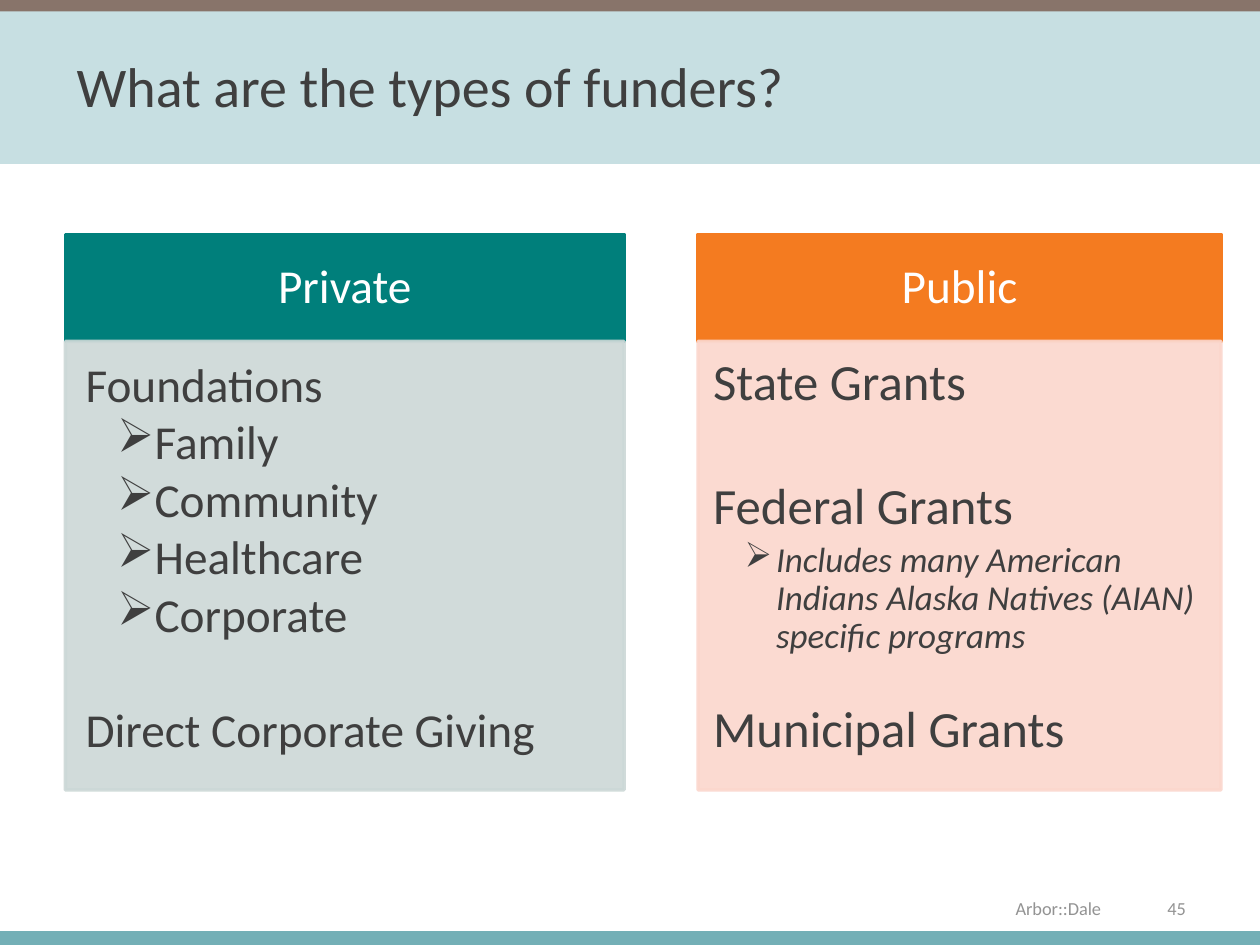
from dataclasses import dataclass

from lxml import etree
from pptx import Presentation
from pptx import util as u
from pptx.dml.color import RGBColor
from pptx.enum import shapes, text
from pptx.oxml import ns

Pt = u.Pt
FONT = "Calibri"
INK = RGBColor(0x3F, 0x3F, 0x3F)
GREY = RGBColor(0x93, 0x93, 0x93)
WHITE = RGBColor(0xFF, 0xFF, 0xFF)
BROWN = RGBColor(0x88, 0x74, 0x6A)
AQUA = RGBColor(0x73, 0xAF, 0xB6)
PALE_AQUA = RGBColor(0xC7, 0xDF, 0xE2)
TEAL = RGBColor(0x00, 0x7F, 0x7B)
PALE_TEAL = RGBColor(0xCC, 0xD8, 0xD7)
ORANGE = RGBColor(0xF4, 0x7B, 0x20)
PALE_ORANGE = RGBColor(0xFB, 0xD7, 0xCD)

WIDTH, HEIGHT = 720, 540
HEAD_TOP, HEAD_H, BODY_H = 133.9, 61.2, 256.3
HEAD_INSETS = (15.1, 8.6, 15.1, 8.6)
LINE_SPACING = 0.9


@dataclass
class Item:
    text: str
    size: float
    bullet: bool = False
    italic: bool = False
    before: float = 0


@dataclass
class Column:
    title: str
    left: float
    width: float
    color: RGBColor
    pale: RGBColor
    insets: tuple[float, float, float, float]
    items: list[Item]


COLUMNS = [
    Column("Private", 37.4, 319.3, TEAL, PALE_TEAL, (11.5, 11.5, 15.1, 17.3), [
        Item("Foundations", 27),
        *[Item(kind, 27, bullet=True)
          for kind in ("Family", "Community", "Healthcare", "Corporate")],
        Item("Direct Corporate Giving", 27, before=33.3),
    ]),
    Column("Public", 398.9, 298.8, ORANGE, PALE_ORANGE, (8.6, 8.6, 11.5, 12.2), [
        Item("State Grants", 29),
        Item("Federal Grants", 29, before=35.7),
        Item("Includes many American Indians Alaska Natives (AIAN) specific programs",
             20, bullet=True, italic=True),
        Item("Municipal Grants", 29, before=24.8),
    ]),
]


def add_rect(s, left: float, top: float, width: float, height: float, color: RGBColor):
    sp = s.shapes.add_shape(shapes.MSO_SHAPE.RECTANGLE,
                            Pt(left), Pt(top), Pt(width), Pt(height))
    sp.shadow.inherit = False
    sp.fill.solid()
    sp.fill.fore_color.rgb = color
    sp.line.fill.background()
    return sp


def add_outline(sp, color: RGBColor) -> None:
    sp.line.color.rgb = color
    sp.line.width = Pt(2)


def set_opacity(sp, percent: int) -> None:
    """Apply one opacity to the fill and the outline."""
    for clr in sp._element.spPr.iter(ns.qn("a:srgbClr")):
        etree.SubElement(clr, ns.qn("a:alpha"), val=str(percent * 1000))


def set_frame(tf, insets, anchor) -> None:
    tf.word_wrap = True
    tf.vertical_anchor = anchor
    tf.margin_left, tf.margin_top, tf.margin_right, tf.margin_bottom = map(Pt, insets)


def format_runs(p, size: float, color: RGBColor, italic: bool = False) -> None:
    for r in p.runs:
        r.font.name = FONT
        r.font.size = Pt(size)
        r.font.color.rgb = color
        r.font.italic = italic


def add_bullet(p) -> None:
    pPr = p._p.get_or_add_pPr()
    pPr.set("marL", str(Pt(36)))
    pPr.set("indent", str(Pt(-18)))
    etree.SubElement(pPr, ns.qn("a:buChar"), char="➢")


def add_label(s, left, top, width, height, words, size, color, align,
              anchor=text.MSO_ANCHOR.TOP, right_inset=7.2) -> None:
    tf = s.shapes.add_textbox(Pt(left), Pt(top), Pt(width), Pt(height)).text_frame
    set_frame(tf, (7.2, 3.6, right_inset, 3.6), anchor)
    tf.text = words
    p = tf.paragraphs[0]
    p.alignment = align
    format_runs(p, size, color)


def add_column(s, col: Column) -> None:
    head = add_rect(s, col.left, HEAD_TOP, col.width, HEAD_H, col.color)
    add_outline(head, col.color)
    set_frame(head.text_frame, HEAD_INSETS, text.MSO_ANCHOR.MIDDLE)
    head.text_frame.text = col.title
    p = head.text_frame.paragraphs[0]
    p.alignment = text.PP_ALIGN.CENTER
    p.line_spacing = LINE_SPACING
    format_runs(p, 27, WHITE)

    body = add_rect(s, col.left, HEAD_TOP + HEAD_H, col.width, BODY_H, col.pale)
    add_outline(body, col.pale)
    set_opacity(body, 90)
    tf = body.text_frame
    set_frame(tf, col.insets, text.MSO_ANCHOR.TOP)
    for i, item in enumerate(col.items):
        p = tf.add_paragraph() if i else tf.paragraphs[0]
        p.text = item.text
        p.alignment = text.PP_ALIGN.LEFT
        p.line_spacing = LINE_SPACING
        p.space_before = Pt(item.before)
        p.space_after = Pt(item.size * 0.135)
        if item.bullet:
            add_bullet(p)
        format_runs(p, item.size, INK, item.italic)


def main() -> None:
    prs = Presentation()
    prs.slide_width, prs.slide_height = Pt(WIDTH), Pt(HEIGHT)
    s = prs.slides.add_slide(prs.slide_layouts[6])

    add_rect(s, 0, 0, WIDTH, 7.2, BROWN)
    add_rect(s, 0, 532.1, WIDTH, 7.9, AQUA)
    add_rect(s, 0, 6.5, WIDTH, 87.1, PALE_AQUA)
    add_label(s, 36.7, 21.6, 648, 54, "What are the types of funders?", 32, INK,
              text.PP_ALIGN.LEFT, text.MSO_ANCHOR.MIDDLE)
    for col in COLUMNS:
        add_column(s, col)
    add_label(s, 37.4, 509, 610.6, 15.1, "Arbor::Dale", 10.5, GREY,
              text.PP_ALIGN.RIGHT, right_inset=18.8)
    add_label(s, 648, 509, 36.7, 15.1, "45", 10.5, GREY, text.PP_ALIGN.RIGHT)

    prs.save("out.pptx")


if __name__ == "__main__":
    main()
